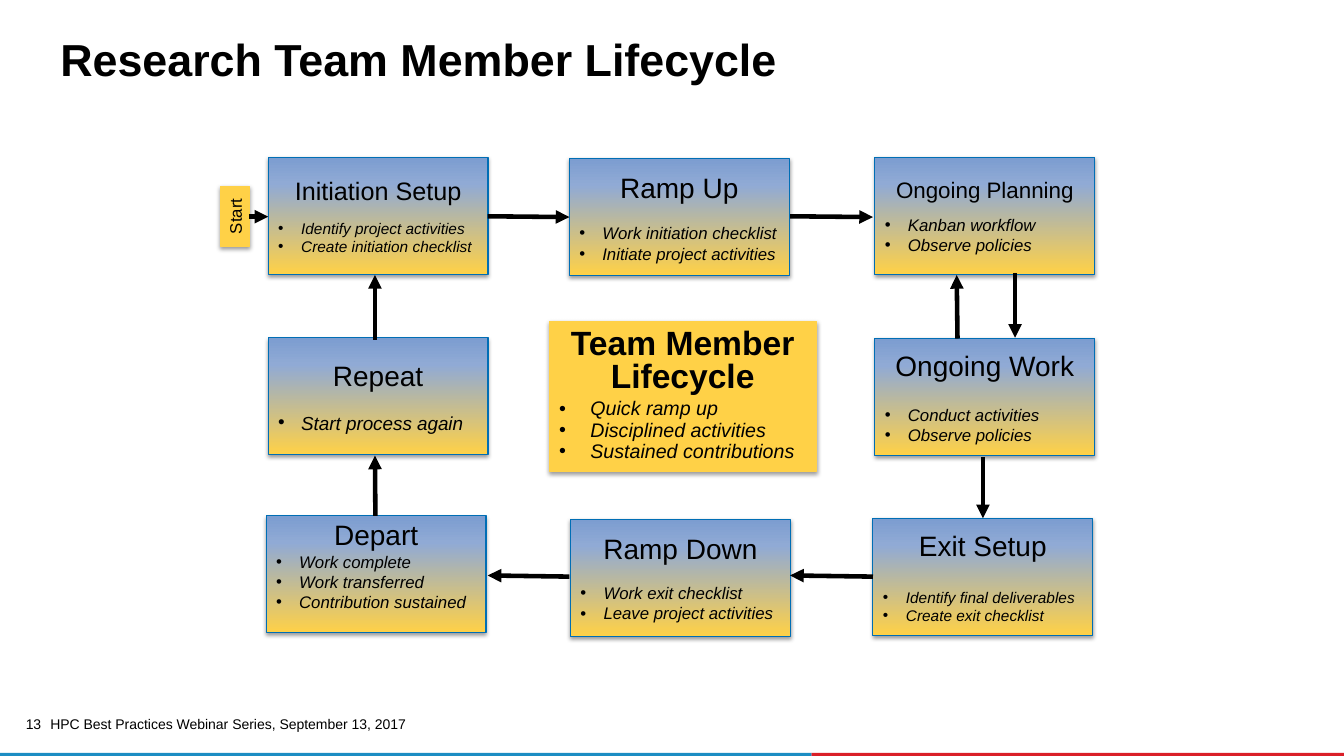
"""Build the research team member lifecycle slide."""
from copy import deepcopy
from dataclasses import dataclass

from lxml import etree
from pptx import Presentation
from pptx.dml.color import RGBColor
from pptx.enum.shapes import MSO_CONNECTOR, MSO_SHAPE
from pptx.enum.text import MSO_ANCHOR, PP_ALIGN
from pptx.oxml.ns import qn
from pptx.util import Cm, Pt

RECTANGLE = MSO_SHAPE.RECTANGLE
STRAIGHT = MSO_CONNECTOR.STRAIGHT
MIDDLE, TOP = MSO_ANCHOR.MIDDLE, MSO_ANCHOR.TOP
LEFT, CENTER, RIGHT = PP_ALIGN.LEFT, PP_ALIGN.CENTER, PP_ALIGN.RIGHT

COLORS = {"black": "000000", "gold": "FFD147", "sky": "90AAD5", "steel": "7C9DD0",
          "outline": "006EB5", "footer_blue": "1B8DC3", "footer_red": "DA1F28"}
GRADIENT = ((0, "gold"), (0.77, "sky"), (1, "steel"))
FONT = "Arial"
SLIDE_WIDTH, SLIDE_HEIGHT = 33.87, 19.05
STAGE_WIDTH, STAGE_HEIGHT = 5.54, 2.95


@dataclass
class Card:
    """A titled box with bullets; lengths in cm, sizes and gap in points."""
    left: float
    top: float
    heading: str
    heading_size: float
    gap: float
    bullets: tuple[str, ...]
    bullet_size: float
    bottom_inset: float = 0.13
    width: float = STAGE_WIDTH
    height: float = STAGE_HEIGHT
    indent: float = 0.58
    is_hub: bool = False


@dataclass
class Arrow:
    """An arrow with its head at the second point, in cm."""
    x1: float
    y1: float
    x2: float
    y2: float


@dataclass
class Label:
    """A plain line of text; lengths in cm, size in points."""
    left: float
    top: float
    width: float
    height: float
    text: str
    size: float
    bold: bool = False
    align: PP_ALIGN = LEFT
    anchor: MSO_ANCHOR = MIDDLE
    line_spacing: float = 1.0
    inset: float = 0.25


CARDS = (
    Card(6.76, 3.96, "Initiation Setup", 18, 9.2,
         ("Identify project activities", "Create initiation checklist"), 11),
    Card(14.35, 3.99, "Ramp Up", 20, 13.8,
         ("Work initiation checklist", "Initiate project activities"), 12),
    Card(22.05, 3.96, "Ongoing Planning", 16, 8,
         ("Kanban workflow", "Observe policies"), 12),
    Card(22.05, 8.53, "Ongoing Work", 20, 16.1,
         ("Conduct activities", "Observe policies"), 12),
    Card(22, 13.06, "Exit Setup", 20, 18.4,
         ("Identify final deliverables", "Create exit checklist"), 11),
    Card(14.38, 13.08, "Ramp Down", 20, 12.7,
         ("Work exit checklist", "Leave project activities"), 12),
    Card(6.71, 13, "Depart", 20, 0,
         ("Work complete", "Work transferred", "Contribution sustained"), 12,
         bottom_inset=0.61),
    Card(6.76, 8.51, "Repeat", 20, 13.6, ("Start process again",), 13.5),
    Card(13.84, 8.1, "Team Member Lifecycle", 24, 3,
         ("Quick ramp up", "Disciplined activities", "Sustained contributions"), 14,
         width=6.73, height=3.78, indent=0.79, is_hub=True),
)

ARROWS = (
    Arrow(6.27, 5.46, 6.76, 5.46),
    Arrow(12.29, 5.45, 14.35, 5.47),
    Arrow(19.91, 5.45, 22, 5.47),
    Arrow(25.58, 6.88, 25.58, 8.51),
    Arrow(24.13, 8.53, 24.11, 6.93),
    Arrow(24.77, 11.51, 24.77, 13.06),
    Arrow(22, 14.53, 19.91, 14.5),
    Arrow(14.35, 14.53, 12.29, 14.5),
    Arrow(9.46, 13, 9.45, 11.48),
    Arrow(9.45, 8.56, 9.45, 6.93),
)

LABELS = (
    Label(1.27, 0.89, 26.42, 1.93, "Research Team Member Lifecycle", 32,
          bold=True, anchor=TOP, line_spacing=0.85),
    Label(1.02, 17.98, 9.6, 0.53, "HPC Best Practices Webinar Series, September 13, 2017", 10),
    Label(0.46, 18.08, 0.58, 0.43, "13", 10, align=RIGHT, anchor=TOP,
          line_spacing=0.9, inset=0),
)


def rgb(name: str) -> RGBColor:
    """Look up a colour by name."""
    return RGBColor.from_string(COLORS[name])


def style_font(paragraph, size: float, bold: bool = False, italic: bool = False) -> None:
    """Format the runs of a paragraph."""
    for run in paragraph.runs:
        font = run.font
        font.name, font.size, font.bold, font.italic = FONT, Pt(size), bold, italic
        font.color.rgb = rgb("black")


def add_box(slide, left: float, top: float, width: float, height: float, outline: str):
    """Add a rectangle with a gold fill, thin outline and soft shadow."""
    box = slide.shapes.add_shape(RECTANGLE, Cm(left), Cm(top), Cm(width), Cm(height))
    box.fill.solid()
    box.fill.fore_color.rgb = rgb("gold")
    box.line.color.rgb = rgb(outline)
    box.line.width = Pt(0.75)
    box.shadow.inherit = False
    effects = box._element.spPr.find(qn("a:effectLst"))
    shadow = etree.SubElement(effects, qn("a:outerShdw"), blurRad=str(Pt(3.1)),
                              dist=str(Pt(1.6)), dir="5400000", rotWithShape="0")
    shade = etree.SubElement(shadow, qn("a:srgbClr"), val=COLORS["black"])
    etree.SubElement(shade, qn("a:alpha"), val="38000")
    box.text_frame.word_wrap = True
    box.text_frame.vertical_anchor = MIDDLE
    return box


def apply_gradient(box) -> None:
    """Fade a box from gold at the bottom to blue at the top."""
    box.fill.gradient()
    box.fill.gradient_angle = 90
    stop_list = box._element.spPr.find(".//" + qn("a:gsLst"))
    stop_list.append(deepcopy(stop_list[0]))
    for stop, (position, color) in zip(box.fill.gradient_stops, GRADIENT):
        stop.position = position
        stop.color.rgb = rgb(color)


def add_card(slide, card: Card) -> None:
    """Draw a lifecycle stage or the central summary."""
    box = add_box(slide, card.left, card.top, card.width, card.height,
                  "gold" if card.is_hub else "outline")
    if not card.is_hub:
        apply_gradient(box)
    frame = box.text_frame
    frame.margin_bottom = Cm(card.bottom_inset)
    heading = frame.paragraphs[0]
    heading.text = card.heading
    heading.alignment = CENTER
    heading.line_spacing = 0.8 if card.is_hub else 1.0
    style_font(heading, card.heading_size, bold=card.is_hub)
    for index, text in enumerate(card.bullets):
        item = frame.add_paragraph()
        item.text = text
        item.alignment = LEFT
        item.line_spacing = 0.9 if card.is_hub else 1.0
        item.space_before = Pt(0 if index else card.gap)
        properties = item._p.get_or_add_pPr()
        properties.set("marL", str(Cm(card.indent)))
        properties.set("indent", str(-Cm(card.indent)))
        etree.SubElement(properties, qn("a:buFont"), typeface=FONT)
        etree.SubElement(properties, qn("a:buChar"), char="•")
        style_font(item, card.bullet_size, italic=True)


def add_start(slide) -> None:
    """Draw the upright start tag."""
    tag = add_box(slide, 5.18, 5.08, 1.5, 0.74, "gold")
    tag.rotation = 270
    frame = tag.text_frame
    frame.margin_left = frame.margin_right = 0
    frame.text = "Start"
    frame.paragraphs[0].alignment = CENTER
    style_font(frame.paragraphs[0], 12)


def add_arrow(slide, arrow: Arrow) -> None:
    """Draw one flow arrow."""
    link = slide.shapes.add_connector(STRAIGHT, Cm(arrow.x1), Cm(arrow.y1),
                                      Cm(arrow.x2), Cm(arrow.y2))
    link.line.color.rgb = rgb("black")
    link.line.width = Pt(3.25)
    etree.SubElement(link.line._get_or_add_ln(), qn("a:tailEnd"), type="triangle")
    etree.SubElement(link._element.spPr, qn("a:effectLst"))


def add_label(slide, label: Label) -> None:
    """Draw the title or a footer text."""
    frame = slide.shapes.add_textbox(Cm(label.left), Cm(label.top), Cm(label.width),
                                     Cm(label.height)).text_frame
    frame.word_wrap = True
    frame.vertical_anchor = label.anchor
    frame.margin_left = frame.margin_right = Cm(label.inset)
    frame.margin_top = frame.margin_bottom = Cm(label.inset / 2)
    frame.text = label.text
    line = frame.paragraphs[0]
    line.alignment = label.align
    line.line_spacing = label.line_spacing
    style_font(line, label.size, bold=label.bold)


def add_footer_bar(slide, left: float, right: float, color: str) -> None:
    """Draw one part of the strip along the bottom edge."""
    bar = slide.shapes.add_shape(RECTANGLE, Cm(left), Cm(SLIDE_HEIGHT - 0.08),
                                 Cm(right - left), Cm(0.08))
    bar.shadow.inherit = False
    bar.fill.solid()
    bar.fill.fore_color.rgb = rgb(color)
    bar.line.fill.background()


def main() -> None:
    """Build and save the slide."""
    deck = Presentation()
    deck.slide_width, deck.slide_height = Cm(SLIDE_WIDTH), Cm(SLIDE_HEIGHT)
    slide = deck.slides.add_slide(deck.slide_layouts[6])
    add_footer_bar(slide, 20.45, SLIDE_WIDTH, "footer_red")
    add_footer_bar(slide, 0, 20.45, "footer_blue")
    for card in CARDS:
        add_card(slide, card)
    add_start(slide)
    for arrow in ARROWS:
        add_arrow(slide, arrow)
    for label in LABELS:
        add_label(slide, label)
    deck.save("out.pptx")


if __name__ == "__main__":
    main()
